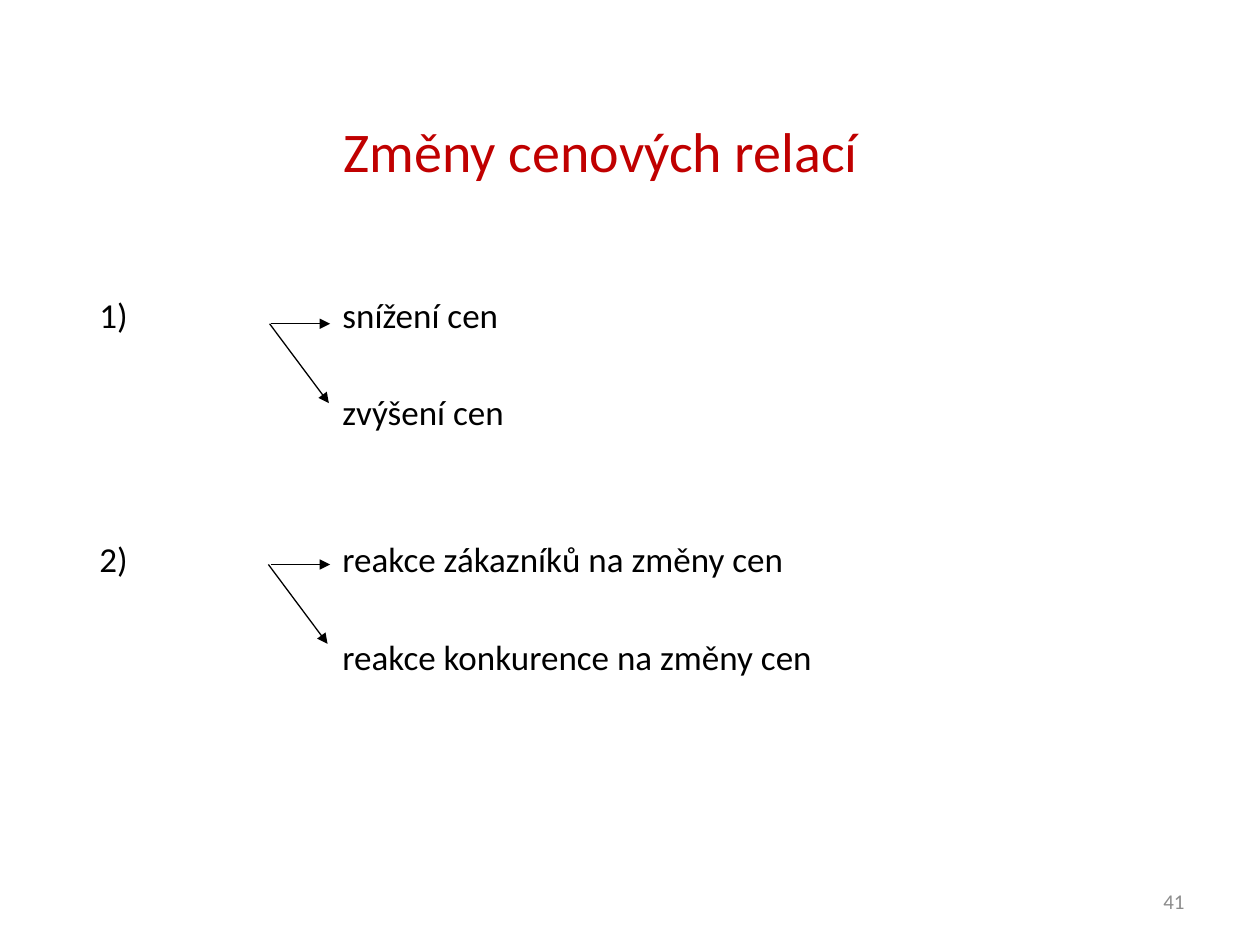
from pptx import Presentation
from pptx.dml.color import RGBColor
from pptx.enum.shapes import MSO_CONNECTOR as Connector
from pptx.enum.text import MSO_ANCHOR as Anchor, PP_ALIGN as Align
from pptx.oxml.ns import qn
from pptx.util import Inches, Pt
from lxml.etree import SubElement


def color(value):
    return RGBColor.from_string(value)


class SlideBuilder:
    font_name = "Calibri"
    ink = "000000"
    accent = "C00000"
    muted = "8C8C8C"

    def __init__(self, slide):
        self.slide = slide

    def style(self, paragraph, size, ink, align=Align.LEFT):
        paragraph.alignment = align
        paragraph.font.name = self.font_name
        paragraph.font.size = Pt(size)
        paragraph.font.color.rgb = color(ink)

    def title(self, text, left, top, width, height):
        heading = self.slide.shapes.title
        heading.left, heading.top = Inches(left), Inches(top)
        heading.width, heading.height = Inches(width), Inches(height)
        heading.text_frame.text = text
        heading.text_frame.vertical_anchor = Anchor.MIDDLE
        self.style(heading.text_frame.paragraphs[0], 32, self.accent, Align.CENTER)

    def text_frame(self, left, top, width, height):
        box = self.slide.shapes.add_textbox(
            Inches(left), Inches(top), Inches(width), Inches(height))
        box.text_frame.word_wrap = True
        return box.text_frame

    def page_number(self, text, left, top, width, height):
        frame = self.text_frame(left, top, width, height)
        frame.vertical_anchor = Anchor.MIDDLE
        frame.text = text
        self.style(frame.paragraphs[0], 12, self.muted, Align.RIGHT)

    def outline(self, groups, tab, left, top, width, height):
        frame = self.text_frame(left, top, width, height)
        lines = []
        for number, items in groups:
            for index, item in enumerate(items):
                label, gap = ("", 31.6) if index else (number, 60)
                lines.append((f"{label}\t{item}", gap))
        for index, (text, gap) in enumerate(lines):
            paragraph = frame.add_paragraph() if index else frame.paragraphs[0]
            paragraph.text = text
            if index:
                paragraph.space_before = Pt(gap)
            tabs = SubElement(paragraph._p.get_or_add_pPr(), qn("a:tabLst"))
            SubElement(tabs, qn("a:tab"), pos=str(Inches(tab)), algn="l")
            self.style(paragraph, 20, self.ink)

    def arrow(self, x1, y1, x2, y2):
        connector = self.slide.shapes.add_connector(
            Connector.STRAIGHT, Inches(x1), Inches(y1), Inches(x2), Inches(y2))
        connector.line.color.rgb = color(self.ink)
        connector.line.width = Pt(0.75)
        SubElement(connector.line._get_or_add_ln(), qn("a:tailEnd"), type="triangle")
        SubElement(connector._element.spPr, qn("a:effectLst"))


def main():
    deck = Presentation()
    deck.slide_width, deck.slide_height = Inches(10), Inches(7.5)
    builder = SlideBuilder(deck.slides.add_slide(deck.slide_layouts[5]))

    builder.page_number("41", 7.17, 6.95, 2.33, 0.4)
    builder.title("Změny cenových relací", 0.51, 0.81, 8.52, 0.76)
    price_changes = [
        ("1)", ["snížení cen", "zvýšení cen"]),
        ("2)", ["reakce zákazníků na změny cen", "reakce konkurence na změny cen"]),
    ]
    builder.outline(price_changes, 1.93, 0.69, 2.28, 8.5, 4.11)

    for branch_top, slant_left in [(2.57, 2.14), (4.48, 2.13)]:
        builder.arrow(2.15, branch_top, 2.62, branch_top)
        builder.arrow(slant_left, branch_top, slant_left + 0.47, branch_top + 0.63)

    deck.save("out.pptx")


if __name__ == "__main__":
    main()
